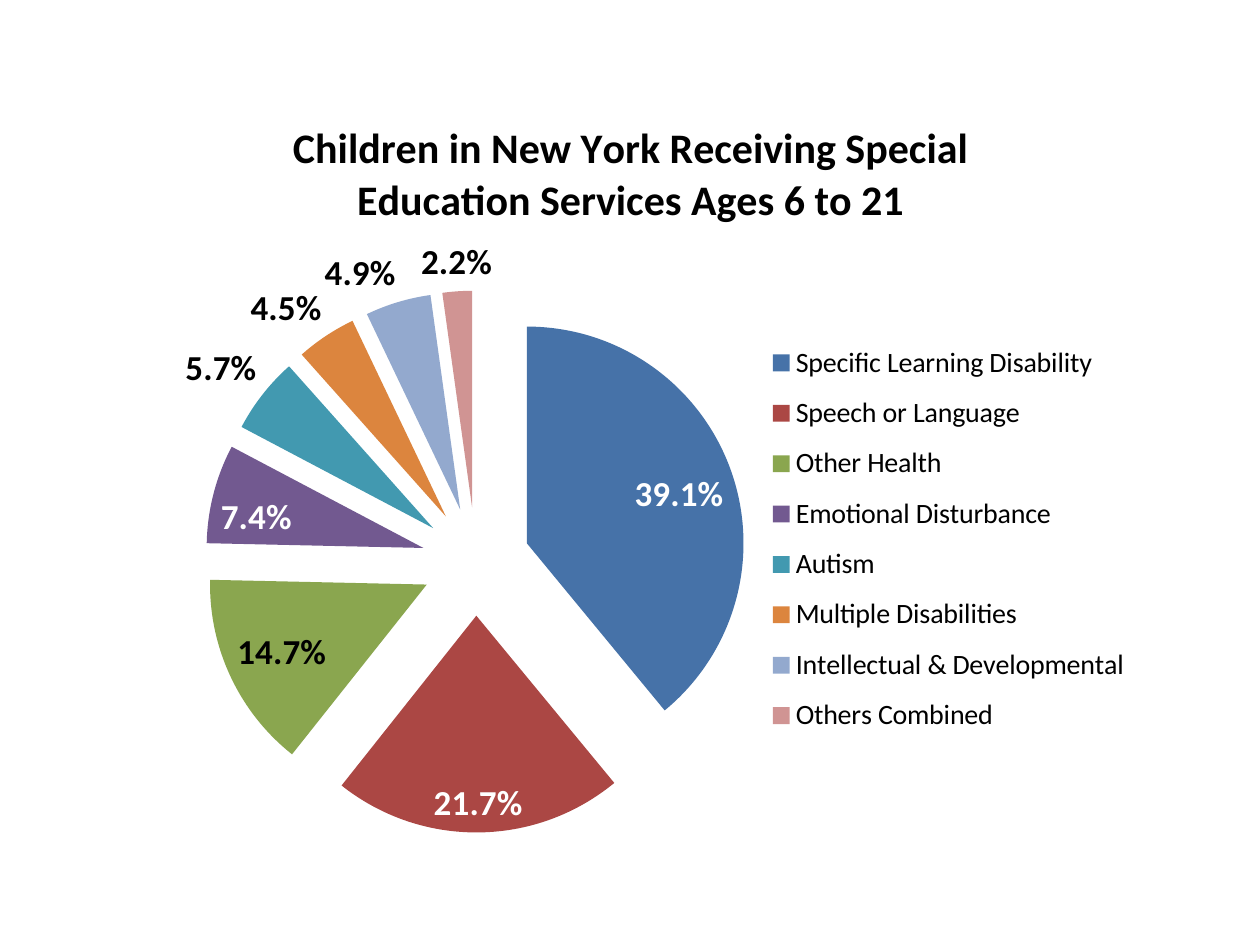
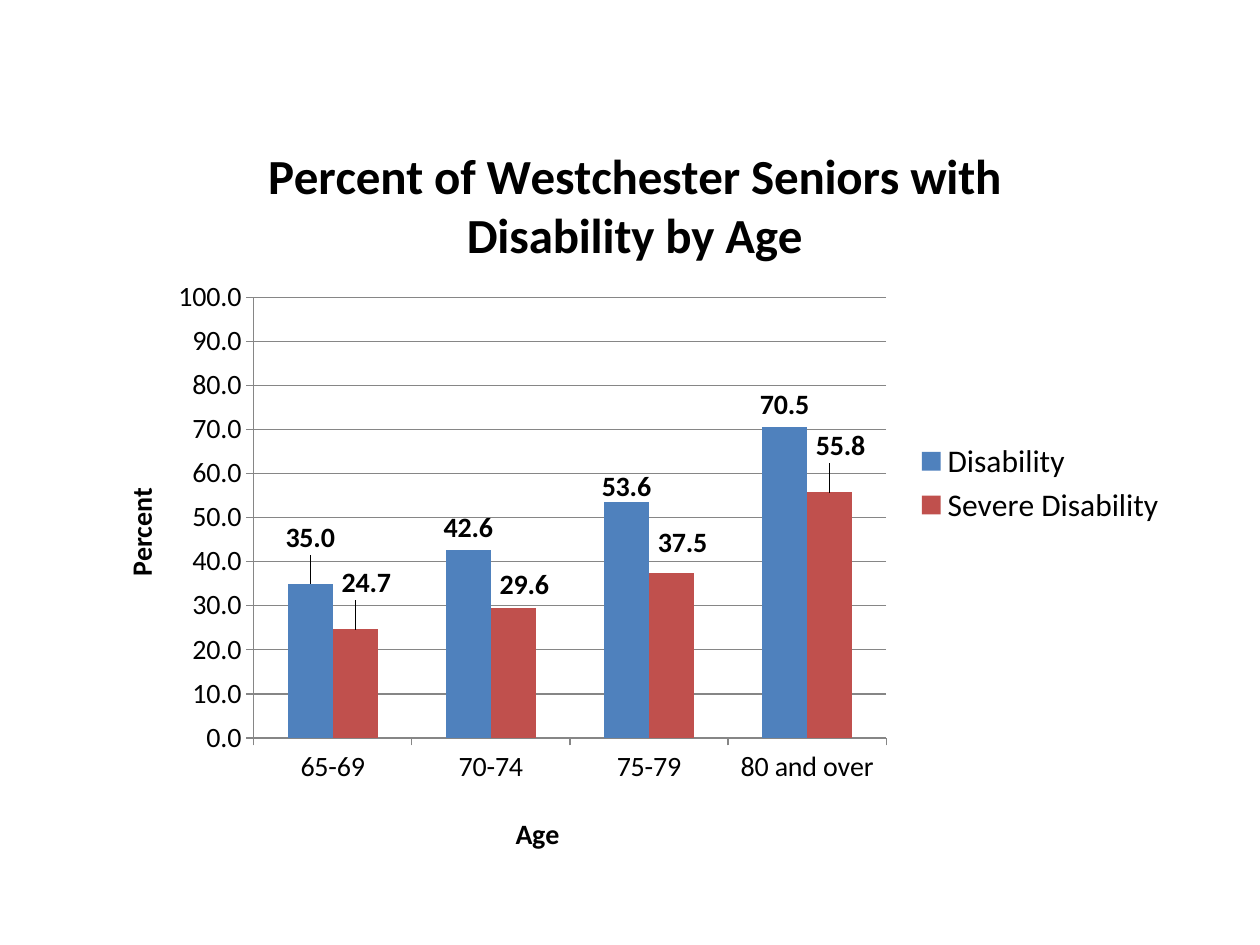
"""Build two slides of disability charts: an exploded pie and clustered columns."""
from lxml import etree
from pptx import Presentation
from pptx.chart.data import CategoryChartData
from pptx.dml.color import RGBColor
from pptx.enum.chart import XL_CHART_TYPE, XL_LABEL_POSITION, XL_LEGEND_POSITION, XL_TICK_MARK
from pptx.oxml.ns import qn
from pptx.util import Inches, Pt

PIE, COLUMN = XL_CHART_TYPE.PIE, XL_CHART_TYPE.COLUMN_CLUSTERED
INSIDE, OUTSIDE = XL_LABEL_POSITION.INSIDE_END, XL_LABEL_POSITION.OUTSIDE_END
RIGHT, TICK = XL_LEGEND_POSITION.RIGHT, XL_TICK_MARK.OUTSIDE

THEME = {
    "font": "Calibri", "black": "000000", "white": "FFFFFF", "line": "868686",
    "slices": ["4672A8", "AB4744", "8AA64F", "725990", "4299B0", "DC853E", "93A9CE", "D09493"],
    "bars": ["4F81BD", "C0504D"],
    "base": 10, "axis": 16,
}

SERVICES = {
    "kind": PIE, "at": (0.75, 0.58, 8.42, 6.17), "format": "0.0%",
    "title": "Children in New York Receiving Special Education Services Ages 6 to 21",
    "cats": ["Specific Learning Disability", "Speech or Language", "Other Health",
             "Emotional Disturbance", "Autism", "Multiple Disabilities",
             "Intellectual & Developmental", "Others Combined"],
    "series": {"Series 1": [0.391, 0.217, 0.147, 0.074, 0.057, 0.045, 0.049, 0.022]},
    "sizes": {"title": 24, "legend": 16, "label": 20},
    "spots": {"title": (0.18, 0.05), "plot": (0.104, 0.28, 0.511, 0.697),
              "legend": (0.63, 0.33, 0.35, 0.54)},
    "inside": ["white", "white", "black", "white"], "explode": 25,
}

SENIORS = {
    "kind": COLUMN, "at": (0.67, 0.75, 8.67, 6.17), "format": "0.0",
    "title": "Percent of Westchester Seniors with Disability by Age",
    "cats": ["65-69", "70-74", "75-79", "80 and over"],
    "series": {"Disability": [35, 42.6, 53.6, 70.5],
               "Severe Disability": [24.7, 29.6, 37.5, 55.8]},
    "sizes": {"title": 28, "legend": 18, "label": 16},
    "spots": {"title": (0.16, 0.05), "plot": (0.155, 0.261, 0.579, 0.567),
              "legend": (0.76, 0.44, 0.23, 0.12)},
    "axes": {"category_axis": ("Age", (0.39, 0.92)), "value_axis": ("Percent", (0.03, 0.5))},
    "shifts": [{0: (0, -0.03), 2: (0, 0.01)},
               {0: (0.01, -0.03), 1: (0.01, 0), 2: (0.01, -0.01), 3: (0.01, -0.03)}],
}


def rgb(name):
    """Turn a theme name or a hex code into a colour."""
    return RGBColor.from_string(THEME.get(name, name))


def style(font, size, bold=False, color="black"):
    """Apply the shared type style to a font."""
    for key, value in {"name": THEME["font"], "size": Pt(size), "bold": bold}.items():
        setattr(font, key, value)
    font.color.rgb = rgb(color)


def paint(part, color):
    """Fill a chart part with a solid colour."""
    part.format.fill.solid()
    part.format.fill.fore_color.rgb = rgb(color)


def place(node, spot, inner=False, shift=False):
    """Give a chart part a manual layout in shares of the chart."""
    for old in node.findall(qn("c:layout")):
        node.remove(old)
    layout = etree.Element(qn("c:layout"))
    manual = etree.SubElement(layout, qn("c:manualLayout"))
    rules = [("layoutTarget", "inner")] if inner else []
    if not shift:
        rules += [("xMode", "edge"), ("yMode", "edge")]
    rules += zip("xywh", spot)
    for tag, value in rules:
        etree.SubElement(manual, qn(f"c:{tag}")).set("val", str(value))
    heads = {qn(f"c:{tag}") for tag in ("tx", "legendPos", "idx")}
    slot = max((i + 1 for i, child in enumerate(node) if child.tag in heads), default=0)
    node.insert(slot, layout)


def caption(title, text, size, spot):
    """Write and place a bold chart or axis title."""
    title.text_frame.text = text
    style(title.text_frame.paragraphs[0].runs[0].font, size, True)
    place(title._element, spot)


def label(series, spec):
    """Show bold values on a series."""
    labels = series.data_labels
    for key, value in {"show_value": True, "number_format": spec["format"],
                       "number_format_is_linked": False, "position": OUTSIDE}.items():
        setattr(labels, key, value)
    style(labels.font, spec["sizes"]["label"], True)


def draw(deck, spec):
    """Add a slide with the frame that both charts share."""
    data = CategoryChartData(number_format=spec["format"])
    data.categories = spec["cats"]
    for name, values in spec["series"].items():
        data.add_series(name, values)
    slide = deck.slides.add_slide(deck.slide_layouts[6])
    box = map(Inches, spec["at"])
    chart = slide.shapes.add_chart(spec["kind"], *box, data).chart
    sizes, spots = spec["sizes"], spec["spots"]
    style(chart.font, THEME["base"])
    caption(chart.chart_title, spec["title"], sizes["title"], spots["title"])
    chart.has_legend = True
    chart.legend.position = RIGHT
    chart.legend.include_in_layout = False
    style(chart.legend.font, sizes["legend"])
    place(chart.legend._element, spots["legend"])
    place(chart._chartSpace.chart.plotArea, spots["plot"], inner=True)
    for series in chart.plots[0].series:
        label(series, spec)
    return chart


def slice_up(chart, spec):
    """Explode and colour the pie, with the large slices labelled inside."""
    plot = chart.plots[0]
    plot.vary_by_categories = True
    series = plot.series[0]
    burst = etree.Element(qn("c:explosion"))
    burst.set("val", str(spec["explode"]))
    series._element.find(qn("c:tx")).addnext(burst)
    for i, color in enumerate(THEME["slices"]):
        paint(series.points[i], color)
    for i, color in enumerate(spec["inside"]):
        mark = series.points[i].data_label
        style(mark.font, spec["sizes"]["label"], True, color)
        mark.position = INSIDE


def set_bars(chart, spec):
    """Colour the columns, shift their labels and dress the axes."""
    plot = chart.plots[0]
    plot.gap_width, plot.overlap, plot.vary_by_categories = 150, 0, False
    for series, color, shifts in zip(plot.series, THEME["bars"], spec["shifts"]):
        paint(series, color)
        for i in shifts:
            mark = series.points[i].data_label
            style(mark.font, spec["sizes"]["label"], True)
            mark.position = OUTSIDE
        for node, spot in zip(series._element.iter(qn("c:dLbl")), shifts.values()):
            place(node, spot, shift=True)
    for name, (text, spot) in spec["axes"].items():
        axis = getattr(chart, name)
        caption(axis.axis_title, text, THEME["axis"], spot)
        style(axis.tick_labels.font, THEME["axis"])
        axis.major_tick_mark = TICK
        axis.format.line.color.rgb = rgb("line")
    scale = chart.value_axis
    for key, value in {"minimum_scale": 0, "maximum_scale": 100, "major_unit": 10,
                       "has_major_gridlines": True}.items():
        setattr(scale, key, value)
    scale.major_gridlines.format.line.color.rgb = rgb("line")
    scale.tick_labels.number_format = spec["format"]
    scale.tick_labels.number_format_is_linked = False


def main():
    """Build and save the deck."""
    deck = Presentation()
    deck.slide_width, deck.slide_height = Inches(10), Inches(7.5)
    for spec, finish in ((SERVICES, slice_up), (SENIORS, set_bars)):
        finish(draw(deck, spec), spec)
    deck.save("out.pptx")


if __name__ == "__main__":
    main()
